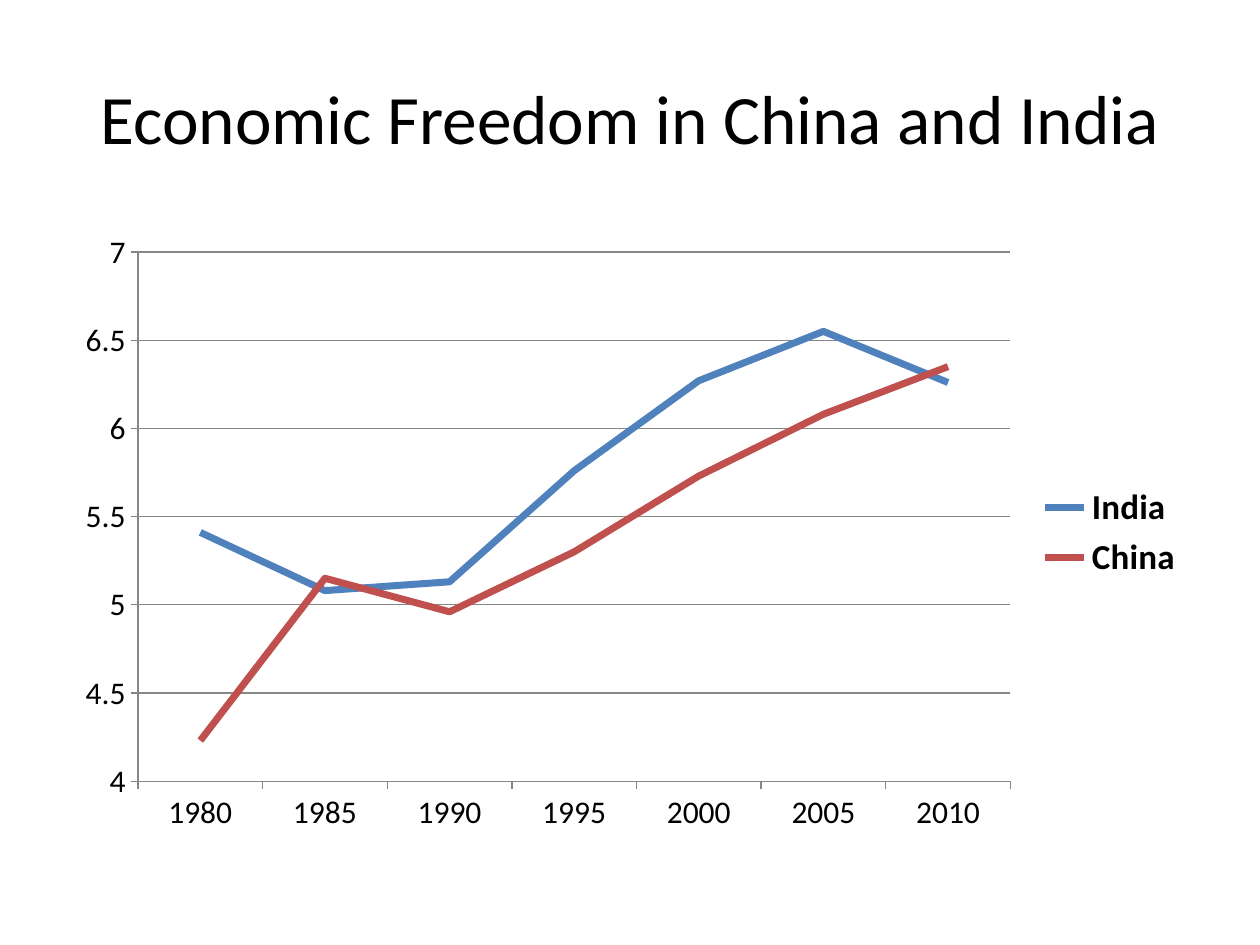
import pptx
import pptx.chart.data
import pptx.dml.color
import pptx.enum.chart
import pptx.enum.text
import pptx.util
from pptx.util import Inches

TITLE = "Economic Freedom in China and India"
YEARS = ["1980", "1985", "1990", "1995", "2000", "2005", "2010"]
FREEDOM_SCORES = {
    "India": [5.41, 5.08, 5.13, 5.76, 6.27, 6.55, 6.26],
    "China": [4.23, 5.15, 4.96, 5.3, 5.73, 6.08, 6.35],
}
TITLE_BOX = (0.5, 0.3, 9, 1.25)
CHART_BOX = (0.5, 1.75, 9, 4.95)
THEME = {
    "font": "Calibri",
    "text": "000000",
    "axis": "868686",
    "India": "4F81BD",
    "China": "C0504D",
    "title_size": 39.6,
    "axis_size": 18,
    "legend_size": 20,
    "series_width": 4,
    "axis_width": 0.75,
}


def style_font(font, size, bold=False):
    """Apply the theme typeface and text colour at the given size."""
    font.name = THEME["font"]
    font.size = pptx.util.Pt(size)
    font.bold = bold
    font.color.rgb = pptx.dml.color.RGBColor.from_string(THEME["text"])


def style_line(line, color, width):
    """Colour a line and set its width in points."""
    line.color.rgb = pptx.dml.color.RGBColor.from_string(color)
    line.width = pptx.util.Pt(width)


def add_title(slide):
    """Add the centred slide title."""
    text_frame = slide.shapes.add_textbox(*map(Inches, TITLE_BOX)).text_frame
    text_frame.word_wrap = True
    text_frame.vertical_anchor = pptx.enum.text.MSO_ANCHOR.MIDDLE
    text_frame.text = TITLE
    paragraph = text_frame.paragraphs[0]
    paragraph.alignment = pptx.enum.text.PP_ALIGN.CENTER
    style_font(paragraph.runs[0].font, THEME["title_size"])


def add_freedom_chart(slide):
    """Add the line chart comparing the two countries."""
    chart_data = pptx.chart.data.CategoryChartData()
    chart_data.categories = YEARS
    for country, scores in FREEDOM_SCORES.items():
        chart_data.add_series(country, scores)
    chart = slide.shapes.add_chart(
        pptx.enum.chart.XL_CHART_TYPE.LINE, *map(Inches, CHART_BOX), chart_data
    ).chart
    chart.has_title = False
    style_font(chart.font, THEME["axis_size"])

    chart.has_legend = True
    chart.legend.position = pptx.enum.chart.XL_LEGEND_POSITION.RIGHT
    chart.legend.include_in_layout = False
    style_font(chart.legend.font, THEME["legend_size"], bold=True)

    chart.plots[0].vary_by_categories = False
    for series in chart.plots[0].series:
        series.smooth = False
        series.marker.style = pptx.enum.chart.XL_MARKER_STYLE.NONE
        style_line(series.format.line, THEME[series.name], THEME["series_width"])

    chart.value_axis.minimum_scale = 4
    chart.value_axis.maximum_scale = 7
    chart.value_axis.major_unit = 0.5
    chart.value_axis.has_major_gridlines = True
    chart.category_axis.has_major_gridlines = False
    for axis in (chart.category_axis, chart.value_axis):
        axis.major_tick_mark = pptx.enum.chart.XL_TICK_MARK.OUTSIDE
        axis.minor_tick_mark = pptx.enum.chart.XL_TICK_MARK.NONE
        style_line(axis.format.line, THEME["axis"], THEME["axis_width"])
    gridlines = chart.value_axis.major_gridlines
    style_line(gridlines.format.line, THEME["axis"], THEME["axis_width"])


def main():
    """Build and save the economic freedom slide."""
    presentation = pptx.Presentation()
    presentation.slide_width = Inches(10)
    presentation.slide_height = Inches(7.5)
    slide = presentation.slides.add_slide(presentation.slide_layouts[6])
    add_title(slide)
    add_freedom_chart(slide)
    presentation.save("out.pptx")


if __name__ == "__main__":
    main()
